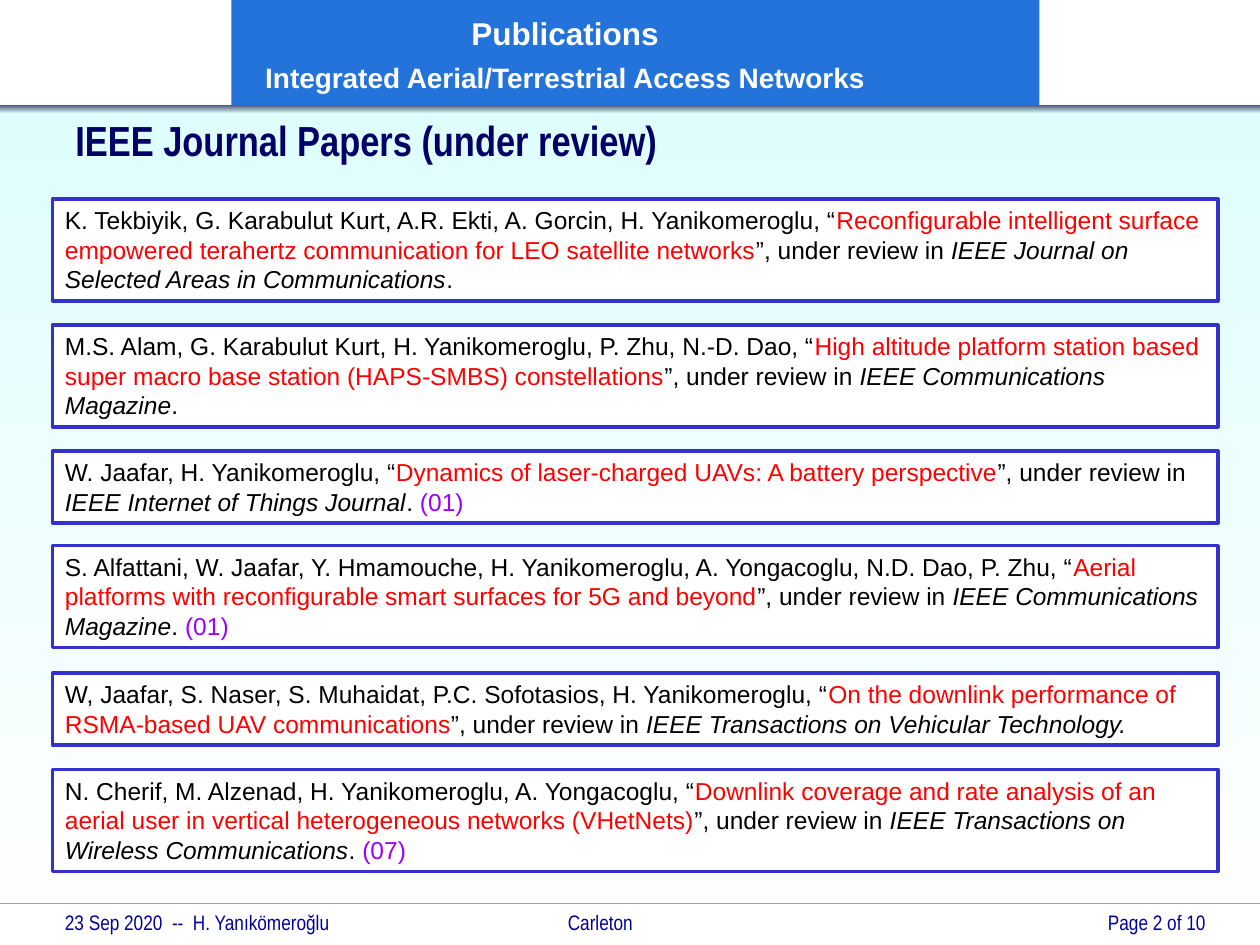
from lxml import etree
from pptx import Presentation
from pptx.dml.color import RGBColor
from pptx.enum.shapes import MSO_CONNECTOR, MSO_SHAPE
from pptx.enum.text import MSO_ANCHOR, PP_ALIGN
from pptx.oxml.ns import qn
from pptx.util import Pt

RECT = MSO_SHAPE.RECTANGLE
LINE = MSO_CONNECTOR.STRAIGHT
MID, TOP = MSO_ANCHOR.MIDDLE, MSO_ANCHOR.TOP
LEFT, MIDDLE, RIGHT = PP_ALIGN.LEFT, PP_ALIGN.CENTER, PP_ALIGN.RIGHT
color = RGBColor.from_string


def write(para, parts, form, align=LEFT):
    """Add (text, changes) parts as runs; changes override the base form."""
    para.alignment = align
    for text, change in parts:
        run = para.add_run()
        run.text = text
        for key, value in {**form, **change}.items():
            if key == "color":
                run.font.color.rgb = color(value)
            else:
                setattr(run.font, key, value)


deck = Presentation()
deck.slide_width, deck.slide_height = Pt(720), Pt(540)
slide = deck.slides.add_slide(deck.slide_layouts[6])
shapes = slide.shapes

# Background and the shaded strip under the header
fades = [(62, 478, "DFFDFD", "FFFFFF"), (60, 5, "475577", "DFFDFD")]
for top, height, start, end in fades:
    band = shapes.add_shape(RECT, 0, Pt(top), Pt(720), Pt(height))
    band.shadow.inherit = False
    band.line.fill.background()
    band.fill.gradient()
    band.fill.gradient_angle = 270
    for stop, tone in zip(band.fill.gradient_stops, (start, end)):
        stop.color.rgb = color(tone)

# Header
head = shapes.add_shape(RECT, Pt(132.3), 0, Pt(461.7), Pt(60))
head.shadow.inherit = False
head.fill.solid()
head.fill.fore_color.rgb = color("2473DB")
head.line.fill.background()
frame = head.text_frame
frame.word_wrap = True
frame.vertical_anchor = MID
frame.margin_right = Pt(87.5)
bold = {"name": "Arial", "bold": True, "color": "FFFFFF"}
first, second = frame.paragraphs[0], frame.add_paragraph()
write(first, [("Publications", {"size": Pt(18)})], bold, MIDDLE)
write(second, [("Integrated Aerial/Terrestrial Access Networks", {"size": Pt(16)})],
      bold, MIDDLE)
first.line_spacing = second.line_spacing = 1.1
second.space_before = Pt(3.2)

# Footer rule
rule = shapes.add_connector(LINE, 0, Pt(516.2), Pt(720), Pt(516.2))
rule.line.color.rgb = color("99CC00")
rule.line.width = Pt(0.75)
etree.SubElement(rule._element.spPr, qn("a:effectLst"))

# Title and footer labels
title = {"name": "Arial Narrow", "size": Pt(24), "bold": True, "color": "000066"}
foot = {"name": "Arial Narrow", "size": Pt(12), "color": "000099"}
labels = [
    ("IEEE Journal Papers (under review)", 36, 65, 612, 30, title, LEFT, MID),
    ("23 Sep 2020  --  H. Yanıkömeroğlu", 30, 516.2, 250, 22, foot, LEFT, TOP),
    ("Carleton", 317.4, 516.2, 100, 22, foot, LEFT, TOP),
    ("Page 2 of 10", 540, 516.2, 156, 22, foot, RIGHT, TOP),
]
for text, left, top, width, height, form, align, anchor in labels:
    box = shapes.add_textbox(Pt(left), Pt(top), Pt(width), Pt(height))
    box.text_frame.word_wrap = True
    box.text_frame.vertical_anchor = anchor
    write(box.text_frame.paragraphs[0], [(text, {})], form, align)

# Papers: top, line count, authors, title, journal, full stop, note
papers = [
    (113.8, 3, "K. Tekbiyik, G. Karabulut Kurt, A.R. Ekti, A. Gorcin, H. Yanikomeroglu",
     "Reconfigurable intelligent surface empowered terahertz communication "
     "for LEO satellite networks",
     "IEEE Journal on Selected Areas in Communications", ".", ""),
    (185.8, 3, "M.S. Alam, G. Karabulut Kurt, H. Yanikomeroglu, P. Zhu, N.-D. Dao",
     "High altitude platform station based super macro base station "
     "(HAPS-SMBS) constellations",
     "IEEE Communications Magazine", ".", ""),
    (257.8, 2, "W. Jaafar, H. Yanikomeroglu",
     "Dynamics of laser-charged UAVs: A battery perspective",
     "IEEE Internet of Things Journal", ". ", "(01)"),
    (311.8, 3, "S. Alfattani, W. Jaafar, Y. Hmamouche, H. Yanikomeroglu, "
     "A. Yongacoglu, N.D. Dao, P. Zhu",
     "Aerial platforms with reconfigurable smart surfaces for 5G and beyond",
     "IEEE Communications Magazine", ". ", "(01)"),
    (384.6, 2, "W, Jaafar, S. Naser, S. Muhaidat, P.C. Sofotasios, H. Yanikomeroglu",
     "On the downlink performance of RSMA-based UAV communications",
     "IEEE Transactions on Vehicular Technology.", "", ""),
    (439.8, 3, "N. Cherif, M. Alzenad, H. Yanikomeroglu, A. Yongacoglu",
     "Downlink coverage and rate analysis of an aerial user in vertical "
     "heterogeneous networks (VHetNets)",
     "IEEE Transactions on Wireless Communications", ". ", "(07)"),
]
body = {"name": "Arial", "size": Pt(14), "color": "000000"}
for top, lines, names, work, venue, dot, note in papers:
    box = shapes.add_shape(RECT, Pt(30), Pt(top), Pt(666), Pt(7.2 + 17 * lines))
    box.shadow.inherit = False
    box.fill.solid()
    box.fill.fore_color.rgb = color("FFFFFF")
    box.line.color.rgb = color("3333CC")
    box.line.width = Pt(2)
    box.text_frame.word_wrap = True
    box.text_frame.vertical_anchor = TOP
    parts = [
        (names + ", “", {}),
        (work, {"color": "FF0000"}),
        ("”, under review in ", {}),
        (venue, {"italic": True}),
        (dot, {}),
        (note, {"color": "9900FF"}),
    ]
    write(box.text_frame.paragraphs[0], [part for part in parts if part[0]], body)

deck.save("out.pptx")
